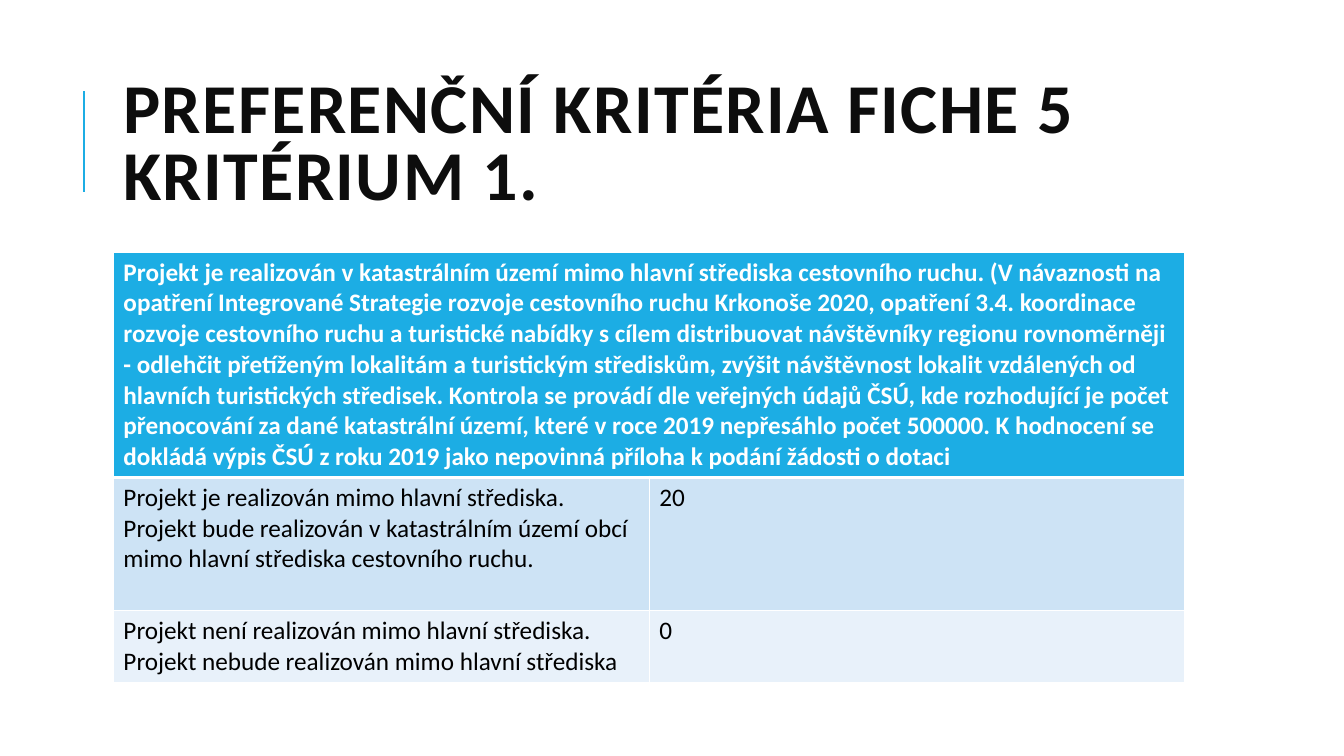
from lxml import etree
from pptx import Presentation
from pptx.dml.color import RGBColor
from pptx.enum.shapes import MSO_CONNECTOR
from pptx.enum.text import MSO_ANCHOR
from pptx.oxml.ns import qn
from pptx.util import Pt

STRAIGHT = MSO_CONNECTOR.STRAIGHT
MIDDLE = MSO_ANCHOR.MIDDLE
ACCENT, WHITE, BLACK, TITLE_INK = "1CADE4", "FFFFFF", "000000", "0D0D0D"
BAND_FILLS = ["CDE3F5", "E8F1FA"]
ROW_HEIGHTS = [161, 95.2, 51.2]

TITLE = "PREFERENČNÍ KRITÉRIA FICHE 5\vKRITÉRIUM 1."
CRITERION = (
    "Projekt je realizován v katastrálním území mimo hlavní střediska cestovního ruchu. "
    "(V návaznosti na opatření Integrované Strategie rozvoje cestovního ruchu Krkonoše 2020, "
    "opatření 3.4. koordinace rozvoje cestovního ruchu a turistické nabídky s cílem distribuovat "
    "návštěvníky regionu rovnoměrněji - odlehčit přetíženým lokalitám a turistickým střediskům, "
    "zvýšit návštěvnost lokalit vzdálených od hlavních turistických středisek. Kontrola se provádí "
    "dle veřejných údajů ČSÚ, kde rozhodující je počet přenocování za dané katastrální území, které "
    "v roce 2019 nepřesáhlo počet 500000. K hodnocení se dokládá výpis ČSÚ z roku 2019 jako "
    "nepovinná příloha k podání žádosti o dotaci"
)
SCORES = [
    ("Projekt je realizován mimo hlavní střediska.\n"
     "Projekt bude realizován v katastrálním území obcí mimo hlavní střediska cestovního ruchu.", "20"),
    ("Projekt není realizován mimo hlavní střediska.\n"
     "Projekt nebude realizován mimo hlavní střediska", "0"),
]


def rgb(value):
    """Turn a hex string into a colour."""
    return RGBColor.from_string(value)


def write(tf, text, color, **formats):
    """Fill a text frame and format all of its runs."""
    tf.text = text
    for p in tf.paragraphs:
        for r in p.runs:
            r.font.color.rgb = rgb(color)
            for name, value in {"name": "Calibri", **formats}.items():
                setattr(r.font, name, value)


def set_borders(cell, top, bottom):
    """Draw white borders on the four sides of a cell."""
    props = cell._tc.get_or_add_tcPr()
    sides = {"a:lnL": 1, "a:lnR": 1, "a:lnT": top, "a:lnB": bottom}
    for i, (tag, width) in enumerate(sides.items()):
        ln = etree.Element(qn(tag), w=str(int(Pt(width))))
        fill = etree.SubElement(ln, qn("a:solidFill"))
        etree.SubElement(fill, qn("a:srgbClr"), val=WHITE)
        props.insert(i, ln)


def add_title(s, x, y, w, h):
    """Place the title with the accent rule at its left."""
    rule_x, rule_y = x - 21, y + 19
    rule = s.shapes.add_connector(STRAIGHT, Pt(rule_x), Pt(rule_y + 72), Pt(rule_x), Pt(rule_y))
    rule.line.color.rgb = rgb(ACCENT)
    rule.line.width = Pt(1.5)
    etree.SubElement(rule._element.spPr, qn("a:effectLst"))
    tf = s.shapes.add_textbox(Pt(x), Pt(y), Pt(w), Pt(h)).text_frame
    tf.word_wrap = True
    tf.vertical_anchor = MIDDLE
    write(tf, TITLE, TITLE_INK, size=Pt(50), bold=True)
    p = tf.paragraphs[0]
    p.line_spacing = 0.8
    for r in p.runs:
        r.font._element.set("spc", "100")


def add_criteria_table(s, x, y, w):
    """Place the criterion as a merged header above its scores."""
    table = s.shapes.add_table(3, 2, Pt(x), Pt(y), Pt(w), Pt(sum(ROW_HEIGHTS))).table
    table.cell(0, 0).merge(table.cell(0, 1))
    for row, height in zip(table.rows, ROW_HEIGHTS):
        row.height = Pt(height)
    for i, texts in enumerate([(CRITERION, ""), *SCORES]):
        header = i == 0
        for j, text in enumerate(texts):
            cell = table.cell(i, j)
            cell.fill.solid()
            cell.fill.fore_color.rgb = rgb(ACCENT if header else BAND_FILLS[i - 1])
            set_borders(cell, 3 if i == 1 else 1, 3 if header else 1)
            if text:
                write(cell.text_frame, text, WHITE if header else BLACK, size=Pt(18), bold=header)


def main():
    """Build and save the slide."""
    prs = Presentation()
    prs.slide_width, prs.slide_height = Pt(960), Pt(540)
    s = prs.slides.add_slide(prs.slide_layouts[6])
    add_title(s, 81, 46, 765.5, 118)
    add_criteria_table(s, 81, 180, 765.5)
    prs.save("out.pptx")


if __name__ == "__main__":
    main()
